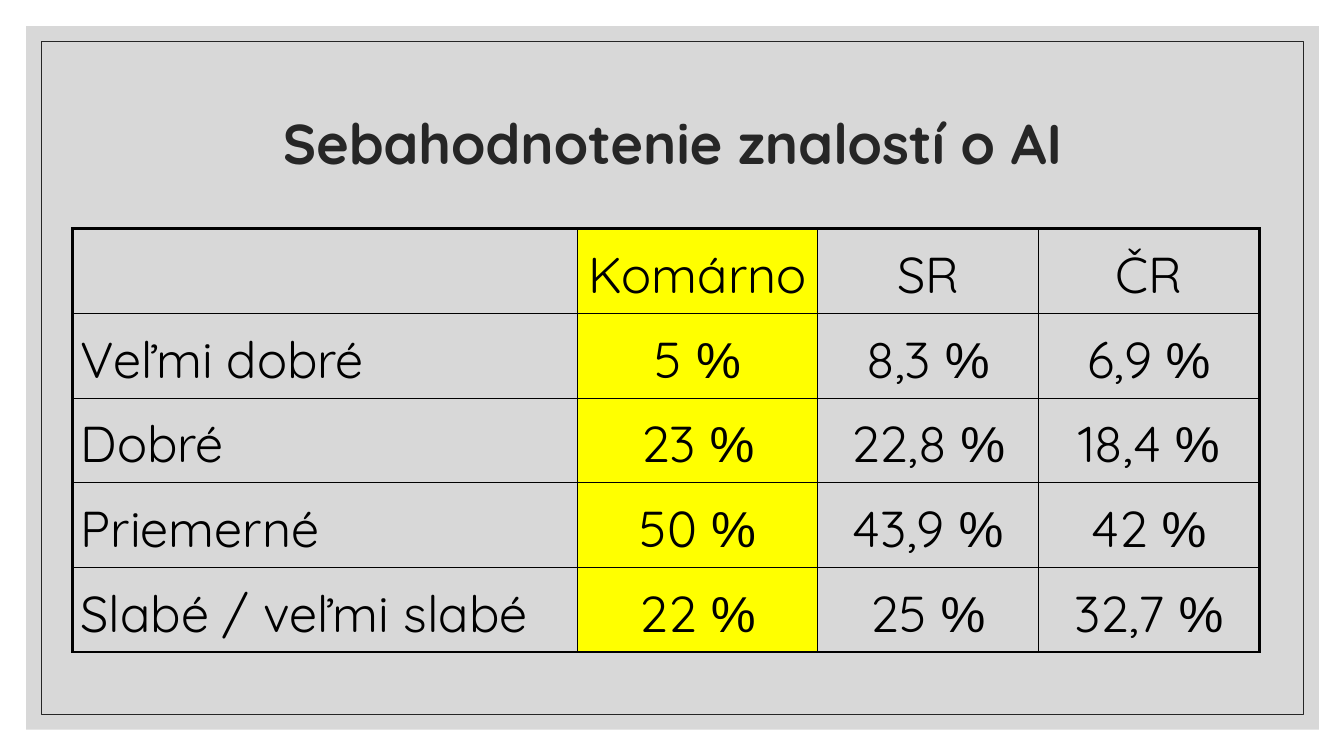
from dataclasses import dataclass

from lxml import etree
from pptx import Presentation
from pptx import util as u
from pptx.dml.color import RGBColor
from pptx.enum import shapes, text
from pptx.oxml import ns


@dataclass(frozen=True)
class Theme:
    panel: str = "BFBFBF"
    panel_alpha: int = 60
    dark: str = "262626"
    ink: str = "000000"
    highlight: str = "FFFF00"
    font: str = "Quicksand"
    symbol_font: str = "Arial"
    title_size: int = 40
    cell_size: int = 36
    thin: float = 1
    thick: float = 2.25


def color(value):
    return RGBColor.from_string(value)


class SlideBuilder:
    def __init__(self, slide, theme):
        self.slide = slide
        self.theme = theme

    def rectangle(self, left, top, width, height, fill=None, alpha=100, line=None):
        box = self.slide.shapes.add_shape(
            shapes.MSO_SHAPE.RECTANGLE,
            u.Inches(left), u.Inches(top), u.Inches(width), u.Inches(height))
        box.shadow.inherit = False
        if fill:
            box.fill.solid()
            box.fill.fore_color.rgb = color(fill)
            tint = box.fill._xPr.find(".//" + ns.qn("a:srgbClr"))
            etree.SubElement(tint, ns.qn("a:alpha"), val=str(alpha * 1000))
        else:
            box.fill.background()
        if line:
            box.line.color.rgb = color(line)
            box.line.width = u.Pt(0.5)
        else:
            box.line.fill.background()

    def span(self, para, words, size, ink, font=None, bold=False):
        span = para.add_run()
        span.text = words
        span.font.name = font or self.theme.font
        span.font.size = u.Pt(size)
        span.font.bold = bold
        span.font.color.rgb = color(ink)

    def title(self, words, left, top, width, height):
        box = self.slide.shapes.add_textbox(
            u.Inches(left), u.Inches(top), u.Inches(width), u.Inches(height))
        frame = box.text_frame
        frame.word_wrap = True
        frame.vertical_anchor = text.MSO_ANCHOR.MIDDLE
        para = frame.paragraphs[0]
        para.alignment = text.PP_ALIGN.CENTER
        para.line_spacing = 0.9
        self.span(para, words, self.theme.title_size, self.theme.dark, bold=True)

    def borders(self, cell, widths):
        properties = cell._tc.get_or_add_tcPr()
        for index, (side, width) in enumerate(widths.items()):
            line = etree.Element(ns.qn("a:ln" + side), w=str(u.Pt(width)))
            fill = etree.SubElement(line, ns.qn("a:solidFill"))
            etree.SubElement(fill, ns.qn("a:srgbClr"), val=self.theme.ink)
            properties.insert(index, line)

    def cell(self, cell, words, centered, highlighted):
        cell.margin_left = cell.margin_right = u.Inches(0.08)
        cell.margin_top = cell.margin_bottom = u.Inches(0.08)
        cell.vertical_anchor = text.MSO_ANCHOR.MIDDLE
        if highlighted:
            cell.fill.solid()
            cell.fill.fore_color.rgb = color(self.theme.highlight)
        else:
            cell.fill.background()
        para = cell.text_frame.paragraphs[0]
        para.alignment = text.PP_ALIGN.CENTER if centered else text.PP_ALIGN.LEFT
        para.line_spacing = 1.1
        # The percent sign has its own font
        number, sign, _ = words.partition("%")
        for part, font in ((number, self.theme.font), (sign, self.theme.symbol_font)):
            if part:
                self.span(para, part, self.theme.cell_size, self.theme.ink, font)

    def table(self, rows, left, top, widths, row_height, highlighted_column):
        last_row, last_column = len(rows) - 1, len(widths) - 1
        table = self.slide.shapes.add_table(
            len(rows), len(widths), u.Inches(left), u.Inches(top),
            u.Inches(sum(widths)), u.Inches(row_height * len(rows))).table
        table.first_row = table.horz_banding = False
        for column, width in zip(table.columns, widths):
            column.width = u.Inches(width)
        for r, row in enumerate(rows):
            table.rows[r].height = u.Inches(row_height)
            for c, words in enumerate(row):
                cell = table.cell(r, c)
                self.cell(cell, words, c > 0, c == highlighted_column)
                # Thick outer frame, thin inner grid
                outer = {"L": c == 0, "R": c == last_column,
                         "T": r == 0, "B": r == last_row}
                self.borders(cell, {
                    side: self.theme.thick if edge else self.theme.thin
                    for side, edge in outer.items()})


KNOWLEDGE = [
    ("", "Komárno", "SR", "ČR"),
    ("Veľmi dobré", "5 %", "8,3 %", "6,9 %"),
    ("Dobré", "23 %", "22,8 %", "18,4 %"),
    ("Priemerné", "50 %", "43,9 %", "42 %"),
    ("Slabé / veľmi slabé", "22 %", "25 %", "32,7 %"),
]


def main():
    deck = Presentation()
    deck.slide_width, deck.slide_height = u.Inches(13.33), u.Inches(7.5)
    theme = Theme()
    page = SlideBuilder(deck.slides.add_slide(deck.slide_layouts[6]), theme)

    # Background panel and inner frame
    page.rectangle(0.26, 0.26, 12.82, 6.98, fill=theme.panel, alpha=theme.panel_alpha)
    page.rectangle(0.41, 0.41, 12.52, 6.68, line=theme.dark)

    # Title
    page.title("Sebahodnotenie znalostí o AI", 1.17, 0.7, 11, 1.5)

    # Self-assessment table
    page.table(KNOWLEDGE, 0.72, 2.27, (5.01, 2.38, 2.19, 2.19), 0.84,
               highlighted_column=1)
    deck.save("out.pptx")


if __name__ == "__main__":
    main()
